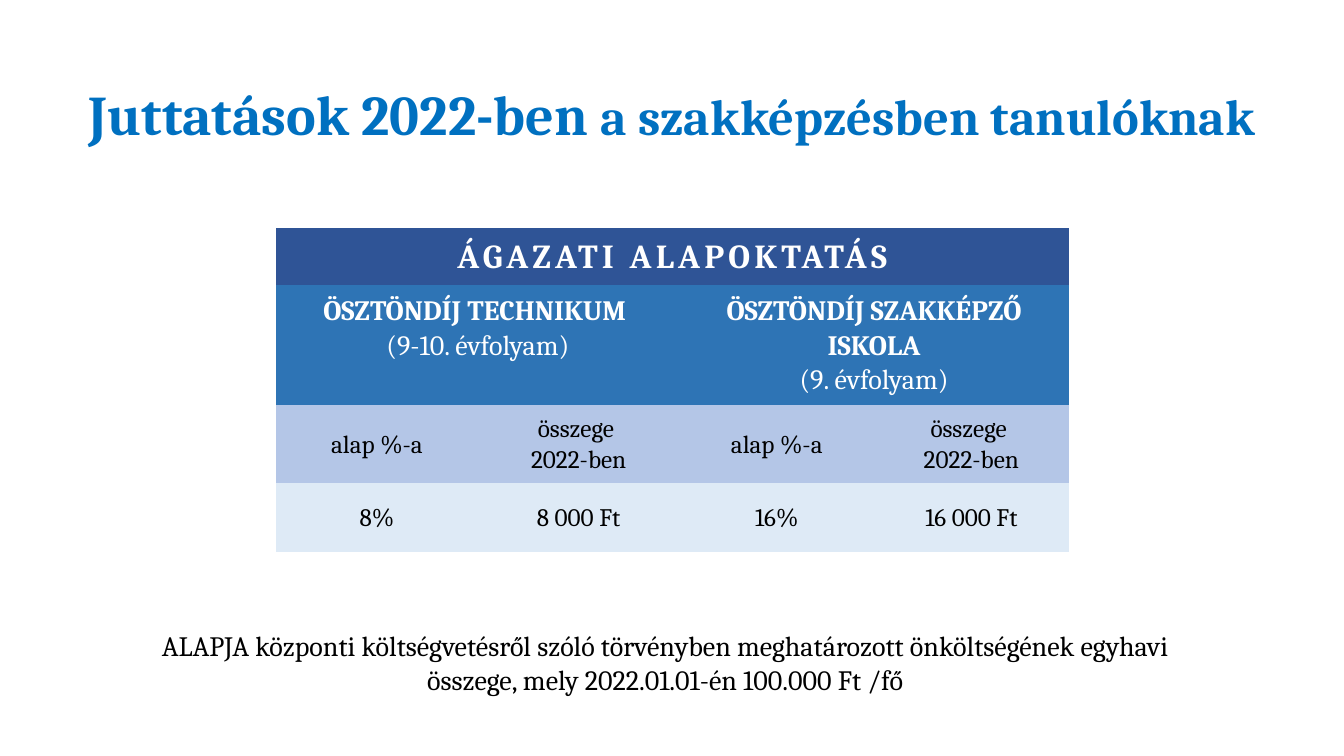
from pptx import Presentation
from pptx.dml.color import RGBColor
from pptx.enum.text import MSO_ANCHOR as Anchor, MSO_AUTO_SIZE as AutoSize, PP_ALIGN as Align
from pptx.oxml.ns import qn
from pptx.util import Inches, Pt

WIDTH, HEIGHT = 13.33, 7.5
FONT = "Cambria"
TITLE_BLUE, WHITE, BLACK = "0070C0", "FFFFFF", "000000"
NAVY, BLUE, LILAC, PALE = "2F5496", "2E74B5", "B4C6E7", "DEEAF6"
PLAIN_TABLE_STYLE = "{2D5ABB26-0587-4C30-8999-92F81FD0307C}"

# Places as shares of the slide: left, top, width, height
TITLE_AREA = (0.034, 0.077, 0.932, 0.157)
TABLE_AREA = (0.2055, 0.3015, 0.59, 0.425)
NOTE_AREA = (0.079, 0.825, 0.832, 0.103)
COLUMNS = (2, 2, 1.93, 1.93)
ROWS = (0.56, 1.18, 0.77, 0.68)


def color(code):
    return RGBColor.from_string(code)


def place(area):
    sides = (WIDTH, HEIGHT, WIDTH, HEIGHT)
    return [Inches(share * side) for share, side in zip(area, sides)]


def add_span(para, text, size, code, bold=False, spacing=0):
    span = para.add_run()
    span.text = text
    span.font.name = FONT
    span.font.size = Pt(size)
    span.font.bold = bold
    span.font.color.rgb = color(code)
    if spacing:
        span._r.get_or_add_rPr().set("spc", str(spacing * 100))


def add_title(page):
    title = page.shapes.title
    title.left, title.top, title.width, title.height = place(TITLE_AREA)
    frame = title.text_frame
    frame.auto_size = AutoSize.NONE
    frame.word_wrap = True
    frame.vertical_anchor = Anchor.MIDDLE
    para = frame.paragraphs[0]
    para.alignment = Align.CENTER
    para.line_spacing = 0.9
    add_span(para, "Juttatások 2022-ben ", 40, TITLE_BLUE, True)
    add_span(para, "a szakképzésben tanulóknak", 36, TITLE_BLUE, True)


def fill_cell(cell, lines, fill, size, code, bold_first=False, spacing=0, anchor=Anchor.TOP):
    cell.fill.solid()
    cell.fill.fore_color.rgb = color(fill)
    cell.vertical_anchor = anchor
    cell.margin_left = cell.margin_right = Inches(0.07)
    cell.margin_top = cell.margin_bottom = Inches(0.08)
    frame = cell.text_frame
    for index, line in enumerate(lines):
        para = frame.add_paragraph() if index else frame.paragraphs[0]
        para.alignment = Align.CENTER
        para.line_spacing = 1.07
        add_span(para, line, size, code, bold_first and index == 0, spacing)


def add_grant_table(page):
    frame = page.shapes.add_table(len(ROWS), len(COLUMNS), *place(TABLE_AREA))
    table = frame.table
    table.first_row = table.horz_banding = False
    table._tbl.tblPr.find(qn("a:tableStyleId")).text = PLAIN_TABLE_STYLE
    for column, width in zip(table.columns, COLUMNS):
        column.width = Inches(width)
    for row, height in zip(table.rows, ROWS):
        row.height = Inches(height)

    # Merged headings
    table.cell(0, 0).merge(table.cell(0, 3))
    fill_cell(table.cell(0, 0), ["ÁGAZATI ALAPOKTATÁS"], NAVY, 24, WHITE, True, 3)
    schools = (
        ["ÖSZTÖNDÍJ TECHNIKUM ", "(9-10. évfolyam)"],
        ["ÖSZTÖNDÍJ SZAKKÉPZŐ ISKOLA", "(9. évfolyam)"],
    )
    for index, lines in enumerate(schools):
        left = 2 * index
        table.cell(1, left).merge(table.cell(1, left + 1))
        fill_cell(table.cell(1, left), lines, BLUE, 20, WHITE, True)

    # Column labels and amounts
    labels = (["alap %-a"], ["összege ", "2022-ben"]) * 2
    amounts = (["8%"], ["8 000 Ft"], ["16%"], ["16 000 Ft"])
    for row, cells, fill in ((2, labels, LILAC), (3, amounts, PALE)):
        for column, lines in enumerate(cells):
            fill_cell(table.cell(row, column), lines, fill, 18, BLACK, anchor=Anchor.MIDDLE)


def add_note(page):
    box = page.shapes.add_textbox(*place(NOTE_AREA))
    frame = box.text_frame
    frame.word_wrap = True
    frame.auto_size = AutoSize.SHAPE_TO_FIT_TEXT
    para = frame.paragraphs[0]
    para.alignment = Align.CENTER
    text = ("ALAPJA központi költségvetésről szóló törvényben meghatározott "
            "önköltségének egyhavi összege, mely 2022.01.01-én 100.000 Ft /fő")
    add_span(para, text, 20, BLACK)


def main():
    deck = Presentation()
    deck.slide_width, deck.slide_height = Inches(WIDTH), Inches(HEIGHT)
    page = deck.slides.add_slide(deck.slide_layouts[5])
    add_title(page)
    add_grant_table(page)
    add_note(page)
    deck.save("out.pptx")


if __name__ == "__main__":
    main()
